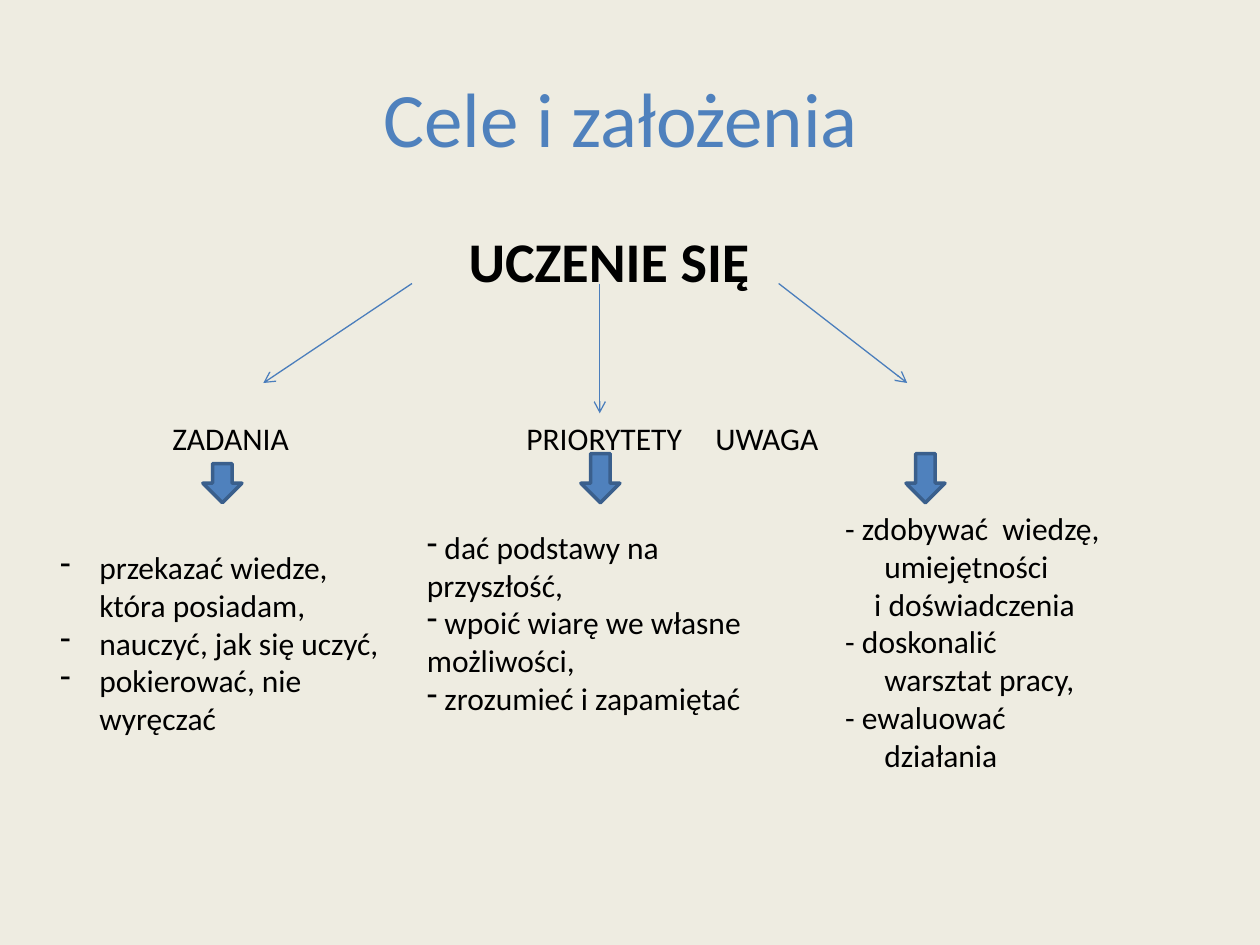
from lxml import etree
from pptx import Presentation
from pptx.dml.color import RGBColor
from pptx.enum.shapes import MSO_CONNECTOR, MSO_SHAPE
from pptx.enum.text import MSO_ANCHOR, MSO_AUTO_SIZE, PP_ALIGN
from pptx.oxml.ns import qn
from pptx.util import Inches, Pt

STRAIGHT = MSO_CONNECTOR.STRAIGHT
DOWN_ARROW = MSO_SHAPE.DOWN_ARROW
TOP, MIDDLE = MSO_ANCHOR.TOP, MSO_ANCHOR.MIDDLE
FIT, NO_FIT = MSO_AUTO_SIZE.SHAPE_TO_FIT_TEXT, MSO_AUTO_SIZE.NONE
LEFT, CENTER = PP_ALIGN.LEFT, PP_ALIGN.CENTER

BLUE, LINE_BLUE, EDGE_BLUE = "4F81BD", "4B7EBC", "3A5F8C"
BLACK, CREAM = "000000", "EEECE1"
HANG = (0.31, -0.31)
FLUSH = (0, 0)


def rgb(value):
    """Turn a hex string into a colour."""
    return RGBColor.from_string(value)


class Deck:
    """Holds the style and the current slide."""

    font = "Calibri"

    def __init__(self):
        """Start a presentation with one blank slide."""
        self.prs = Presentation()
        self.prs.slide_width, self.prs.slide_height = Inches(10), Inches(7.5)
        self.s = self.prs.slides.add_slide(self.prs.slide_layouts[6])
        fill = self.s.background.fill
        fill.solid()
        fill.fore_color.rgb = rgb(CREAM)

    def text(self, box, lines, size=18, color=BLACK, bold=False, align=LEFT,
             anchor=TOP, fit=FIT, bullet=None, tab=None):
        """Add a text box from (text, (margin, first-line indent)) lines."""
        tf = self.s.shapes.add_textbox(*map(Inches, box)).text_frame
        tf.word_wrap, tf.auto_size, tf.vertical_anchor = True, fit, anchor
        for i, (line, (margin, indent)) in enumerate(lines):
            p = tf.add_paragraph() if i else tf.paragraphs[0]
            p.text, p.alignment = line, align
            pPr = p._p.get_or_add_pPr()
            pPr.set("marL", str(Inches(margin)))
            pPr.set("indent", str(Inches(indent)))
            if bullet:
                etree.SubElement(pPr, qn("a:buFontTx"))
                etree.SubElement(pPr, qn("a:buChar"), char=bullet)
            if tab:
                tabs = etree.SubElement(pPr, qn("a:tabLst"))
                etree.SubElement(tabs, qn("a:tab"), pos=str(Inches(tab)), algn="l")
            for r in p.runs:
                r.font.name, r.font.size, r.font.bold = self.font, Pt(size), bold
                r.font.color.rgb = rgb(color)

    def arrow(self, start, end):
        """Add a thin line with an open arrowhead at its end."""
        c = self.s.shapes.add_connector(STRAIGHT, *map(Inches, start + end))
        c.line.color.rgb, c.line.width = rgb(LINE_BLUE), Pt(0.75)
        etree.SubElement(c.line._get_or_add_ln(), qn("a:tailEnd"), type="arrow")
        etree.SubElement(c._element.spPr, qn("a:effectLst"))

    def down_arrow(self, left, top, bottom=3.99, width=0.31):
        """Add a block arrow pointing down to a common bottom."""
        sp = self.s.shapes.add_shape(
            DOWN_ARROW, *map(Inches, (left, top, width, bottom - top)))
        sp.shadow.inherit = False
        sp.fill.solid()
        sp.fill.fore_color.rgb = rgb(BLUE)
        sp.line.color.rgb, sp.line.width = rgb(EDGE_BLUE), Pt(2)


def main():
    """Build the slide of goals and assumptions."""
    deck = Deck()
    deck.text((0.43, 0.3, 9, 1.25), [("Cele i założenia", FLUSH)], size=44,
              color=BLUE, align=CENTER, anchor=MIDDLE, fit=NO_FIT)
    deck.text((0.5, 1.75, 9.22, 5.75), [("UCZENIE SIĘ", (3.12, 0))], size=32,
              bold=True, fit=NO_FIT)

    for start, end in (((3.27, 2.25), (2.09, 3.04)),
                       ((4.76, 2.25), (4.76, 3.28)),
                       ((6.18, 2.25), (7.2, 3.04))):
        deck.arrow(start, end)

    deck.text((0.43, 3.28, 2.52, 0.4), [("ZADANIA", (0.84, 0))])
    deck.text((3.46, 3.28, 5.43, 0.4), [("PRIORYTETY\tUWAGA", (0.62, 0))], tab=3.27)
    for left, top in ((1.61, 3.68), (4.61, 3.6), (7.19, 3.6)):
        deck.down_arrow(left, top)

    deck.text((0.38, 4.3, 2.83, 1.62), [
        ("przekazać wiedze, która posiadam,", HANG),
        ("nauczyć, jak się uczyć,", HANG),
        ("pokierować, nie wyręczać", HANG)], bullet="-")
    deck.text((3.29, 4.14, 2.95, 1.62), [
        (" dać podstawy na przyszłość,", FLUSH),
        (" wpoić wiarę we własne możliwości,", FLUSH),
        (" zrozumieć i zapamiętać", FLUSH)], bullet="-")
    deck.text((6.61, 3.99, 2.28, 2.22), [
        ("- zdobywać  wiedzę, umiejętności", HANG),
        ("i doświadczenia", (0.23, 0)),
        ("- doskonalić warsztat pracy,", HANG),
        ("- ewaluować działania", HANG)])
    deck.prs.save("out.pptx")


if __name__ == "__main__":
    main()
